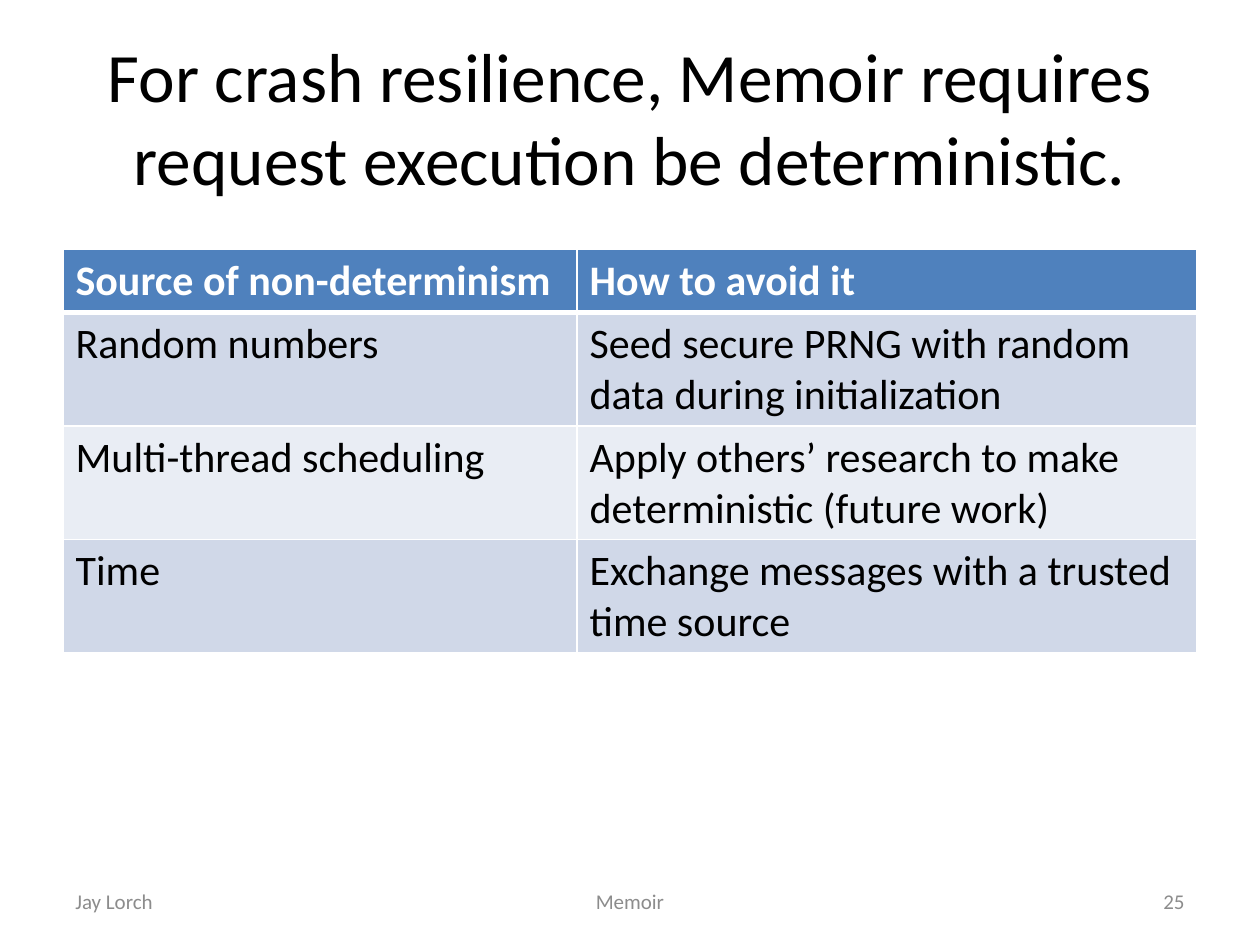
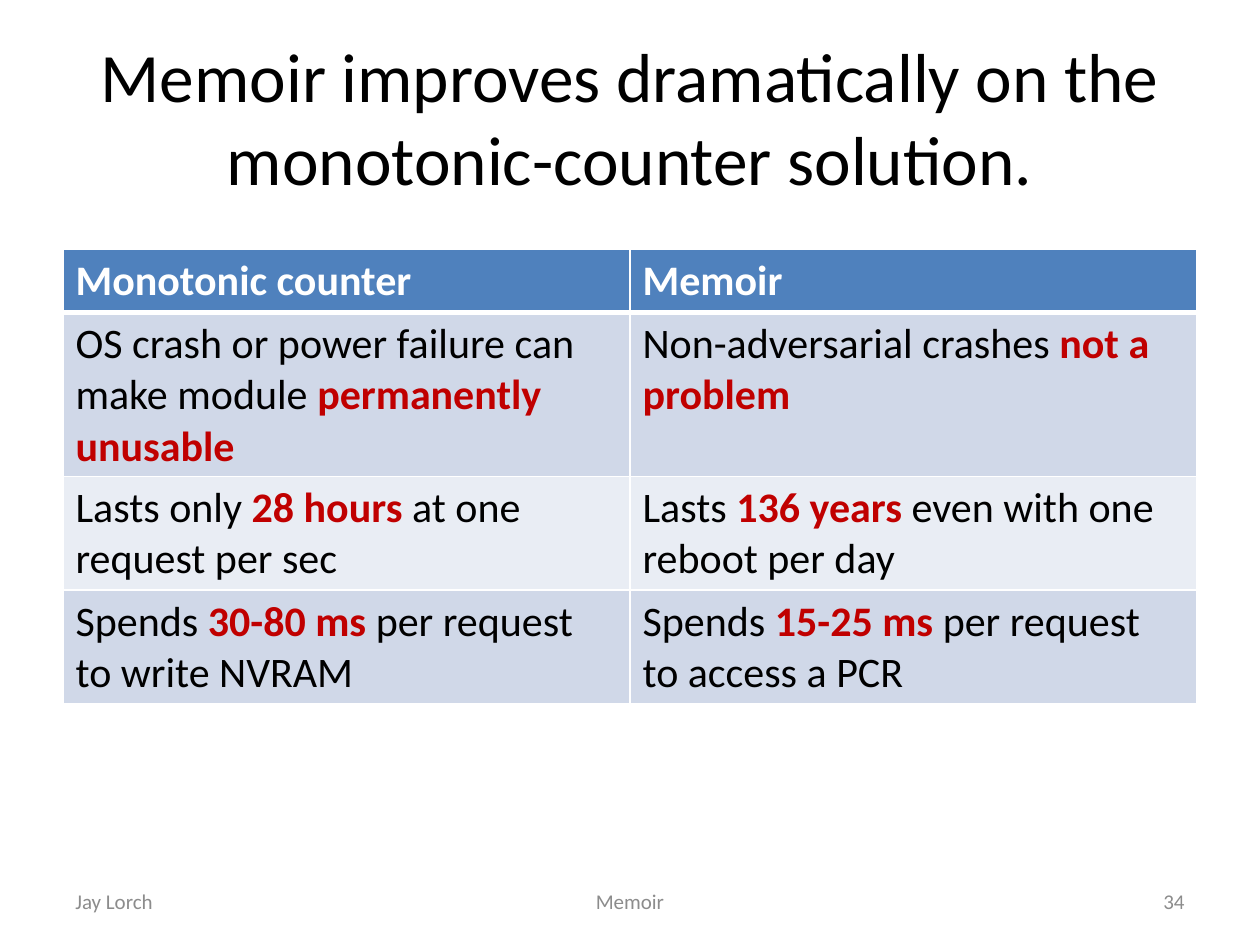
from lxml import etree
from pptx import Presentation
from pptx import util as u
from pptx.dml.color import RGBColor
from pptx.enum import text
from pptx.oxml import ns

# Text between asterisks is emphasised.
PAGES = [
    {
        "title": "For crash resilience, Memoir requires request execution be deterministic.",
        "number": "25",
        "columns": (4.08, 4.92),
        "rows": [
            ("Source of non-determinism", "How to avoid it"),
            ("Random numbers", "Seed secure PRNG with random data during initialization"),
            ("Multi-thread scheduling",
             "Apply others’ research to make deterministic (future work)"),
            ("Time", "Exchange messages with a trusted time source"),
        ],
    },
    {
        "title": "Memoir improves dramatically on the monotonic-counter solution.",
        "number": "34",
        "columns": (4.5, 4.5),
        "rows": [
            ("Monotonic counter", "Memoir"),
            ("OS crash or power failure can make module *permanently unusable*",
             "Non-adversarial crashes *not a problem*"),
            ("Lasts only *28 hours* at one request per sec",
             "Lasts *136 years *even with one reboot per day"),
            ("Spends *30-80 ms *per request to write NVRAM",
             "Spends *15-25 ms *per request to access a PCR"),
        ],
    },
]
AUTHOR, TALK = "Jay Lorch", "Memoir"

FONT = "Calibri"
BLACK = RGBColor(0x00, 0x00, 0x00)
WHITE = RGBColor(0xFF, 0xFF, 0xFF)
GREY = RGBColor(0x8C, 0x8C, 0x8C)
RED = RGBColor(0xC0, 0x00, 0x00)
HEADER_FILL = RGBColor(0x4F, 0x81, 0xBD)
BAND_FILLS = (RGBColor(0xE9, 0xED, 0xF4), RGBColor(0xD0, 0xD8, 0xE8))

WIDTH, HEIGHT, MARGIN = 10, 7.5, 0.5
BODY_WIDTH = WIDTH - 2 * MARGIN
TABLE_TOP, ROW_HEIGHT = 1.98, 0.41
FOOTER_TOP, FOOTER_HEIGHT = 6.95, 0.4
SIDE_WIDTH, MIDDLE_WIDTH = 2.33, 3.17
THIN, THICK = 1, 3

LEFT, CENTER, RIGHT = text.PP_ALIGN.LEFT, text.PP_ALIGN.CENTER, text.PP_ALIGN.RIGHT


def write(frame, words, size, color=BLACK, bold=False, align=LEFT):
    """Fill a text frame with one paragraph, emphasising the parts between asterisks."""
    frame.word_wrap = True
    para = frame.paragraphs[0]
    para.alignment = align
    for index, part in enumerate(words.split("*")):
        if not part:
            continue
        strong = index % 2 == 1
        span = para.add_run()
        span.text = part
        span.font.name = FONT
        span.font.size = u.Pt(size)
        span.font.bold = bold or strong
        span.font.color.rgb = RED if strong else color


def add_text(page, words, left, top, width, height, **style):
    box = page.shapes.add_textbox(*map(u.Inches, (left, top, width, height)))
    box.text_frame.vertical_anchor = text.MSO_ANCHOR.MIDDLE
    write(box.text_frame, words, **style)


def set_borders(cell, **widths):
    properties = cell._tc.get_or_add_tcPr()
    for side in ("L", "R", "T", "B"):
        line = etree.SubElement(properties, ns.qn("a:ln" + side),
                                w=str(u.Pt(widths.get(side, THIN))))
        fill = etree.SubElement(line, ns.qn("a:solidFill"))
        etree.SubElement(fill, ns.qn("a:srgbClr"), val=str(WHITE))


def add_table(page, rows, columns):
    table = page.shapes.add_table(
        len(rows), len(columns), u.Inches(MARGIN), u.Inches(TABLE_TOP),
        u.Inches(BODY_WIDTH), u.Inches(ROW_HEIGHT * len(rows))).table
    for column, width in zip(table.columns, columns):
        column.width = u.Inches(width)
    for r, row in enumerate(rows):
        header = r == 0
        for c, words in enumerate(row):
            cell = table.cell(r, c)
            set_borders(cell, T=THICK if r == 1 else THIN, B=THICK if header else THIN)
            cell.fill.solid()
            cell.fill.fore_color.rgb = HEADER_FILL if header else BAND_FILLS[r % 2]
            write(cell.text_frame, words, size=24, bold=header,
                  color=WHITE if header else BLACK)


def add_footer(page, number):
    for words, width, align, share in (
        (AUTHOR, SIDE_WIDTH, LEFT, 0),
        (TALK, MIDDLE_WIDTH, CENTER, 0.5),
        (number, SIDE_WIDTH, RIGHT, 1),
    ):
        left = MARGIN + share * (BODY_WIDTH - width)
        add_text(page, words, left, FOOTER_TOP, width, FOOTER_HEIGHT,
                 size=12, color=GREY, align=align)


def main():
    deck = Presentation()
    deck.slide_width, deck.slide_height = u.Inches(WIDTH), u.Inches(HEIGHT)
    for content in PAGES:
        page = deck.slides.add_slide(deck.slide_layouts[6])
        add_text(page, content["title"], MARGIN, 0.3, BODY_WIDTH, 1.25,
                 size=39.6, align=CENTER)
        add_table(page, content["rows"], content["columns"])
        add_footer(page, content["number"])
    deck.save("out.pptx")


if __name__ == "__main__":
    main()
